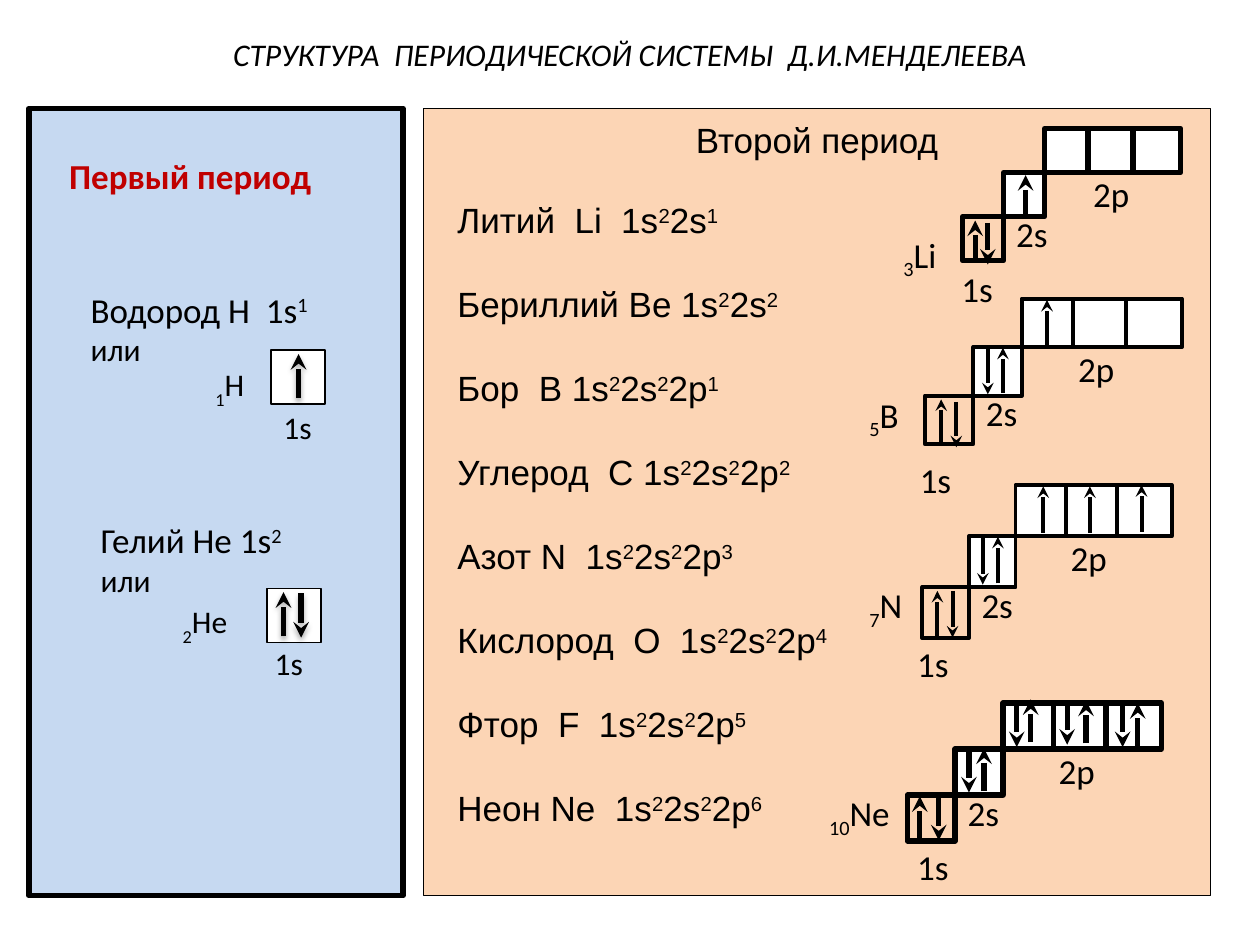
"""Slide on the first two periods of the periodic system with orbital diagrams."""
from dataclasses import dataclass

from lxml import etree
from pptx import Presentation
from pptx.dml.color import RGBColor
from pptx.enum.shapes import MSO_CONNECTOR, MSO_SHAPE
from pptx.enum.text import MSO_ANCHOR, PP_ALIGN
from pptx.oxml.ns import qn
from pptx.util import Inches, Pt

RECTANGLE, STRAIGHT = MSO_SHAPE.RECTANGLE, MSO_CONNECTOR.STRAIGHT
TOP, MIDDLE = MSO_ANCHOR.TOP, MSO_ANCHOR.MIDDLE
LEFT, CENTER = PP_ALIGN.LEFT, PP_ALIGN.CENTER


@dataclass(frozen=True)
class Theme:
    """Colours, fonts and type sizes."""
    ink: str = "000000"
    accent: str = "C00000"
    blue: str = "C6D9F1"
    peach: str = "FCD5B5"
    cell: str = "FFFFFF"
    body_font: str = "Calibri"
    list_font: str = "Arial"
    large: int = 20
    small: int = 18


THEME = Theme()

TITLE = "СТРУКТУРА  ПЕРИОДИЧЕСКОЙ СИСТЕМЫ  Д.И.МЕНДЕЛЕЕВА"
FIRST_PERIOD = "Первый период"
SECOND_PERIOD = "Второй период"
OR = "или"

# Every second part between bars is raised or lowered.
SECOND_PERIOD_ELEMENTS = [
    "Литий  Li  1s|2|2s|1",
    "Бериллий Ве 1s|2|2s|2",
    "Бор  В 1s|2|2s|2|2р|1",
    "Углерод  С 1s|2|2s|2|2р|2",
    "Азот N  1s|2|2s|2|2р|3",
    "Кислород  О  1s|2|2s|2|2р|4",
    "Фтор  F  1s|2|2s|2|2р|5",
    "Неон Nе  1s|2|2s|2|2р|6",
]

FIRST_PERIOD_ELEMENTS = [
    dict(formula="Водород Н  1s|1", formula_at=(0.62, 2.22), symbol="|1|Н",
         symbol_at=(1.69, 2.9), cell_at=(2.15, 2.78), orbital_at=(2.23, 3.24),
         up=[(2.37, 2.81)], down=[]),
    dict(formula="Гелий Не 1s|2", formula_at=(0.7, 4.05), symbol="|2|Не",
         symbol_at=(1.43, 4.78), cell_at=(2.12, 4.67), orbital_at=(2.16, 5.11),
         up=[(2.25, 4.7)], down=[(2.39, 4.71)]),
]

STAIRCASES = [
    dict(symbol="|3|Li", symbol_at=(7.15, 1.85), orbital_at=(7.61, 2.12),
         start=(7.64, 1.72), step=(0.325, 0.35), row=1.08, weight=3, arrow=0.33,
         up=[(7.74, 1.75), (8.14, 1.39)], down=[(7.84, 1.77)]),
    dict(symbol="|5|В", symbol_at=(6.88, 3.12), orbital_at=(7.28, 3.64),
         start=(7.34, 3.14), step=(0.385, 0.385), row=1.27, weight=2.25, arrow=0.36,
         up=[(7.47, 3.17), (7.96, 2.76), (8.31, 2.38)],
         down=[(7.59, 3.19), (7.84, 2.77)]),
    dict(symbol="|7|N", symbol_at=(6.88, 4.63), orbital_at=(7.26, 5.1),
         start=(7.32, 4.66), step=(0.37, 0.405), row=1.24, weight=2.25, arrow=0.37,
         up=[(7.44, 4.69), (7.92, 4.26), (8.28, 3.86), (8.65, 3.86), (9.06, 3.85)],
         down=[(7.56, 4.69), (7.8, 4.27)]),
    dict(symbol="|10|Nе", symbol_at=(6.56, 6.28), orbital_at=(7.26, 6.71),
         start=(7.2, 6.31), step=(0.38, 0.365), row=1.26, weight=3, arrow=0.34,
         up=[(7.3, 6.32), (7.81, 5.94), (8.18, 5.55), (8.62, 5.56), (9.03, 5.58)],
         down=[(7.45, 6.33), (7.69, 5.95), (8.07, 5.59), (8.47, 5.57), (8.91, 5.59)]),
]
DIVIDERS = (0.32, 0.65)


def write(paragraph, marked, size, shift=30, color=THEME.ink, font=THEME.body_font,
          bold=False, italic=False):
    for index, part in enumerate(marked.split("|")):
        if not part:
            continue
        run = paragraph.add_run()
        run.text = part
        run.font.size, run.font.name = Pt(size), font
        run.font.bold, run.font.italic = bold, italic
        run.font.color.rgb = RGBColor.from_string(color)
        if index % 2:
            run.font._element.set("baseline", str(shift * 1000))


def set_insets(frame, horizontal, vertical):
    frame.margin_left = frame.margin_right = Inches(horizontal)
    frame.margin_top = frame.margin_bottom = Inches(vertical)


def add_text(shapes, at, extent, marked, size, insets=(0.1, 0.05), anchor=MIDDLE,
             wrap=True, align=LEFT, **style):
    box = shapes.add_textbox(*map(Inches, at + extent))
    frame = box.text_frame
    frame.word_wrap, frame.vertical_anchor = wrap, anchor
    set_insets(frame, *insets)
    paragraph = frame.paragraphs[0]
    paragraph.alignment = align
    write(paragraph, marked, size, **style)
    return paragraph


def add_label(shapes, at, marked, size, shift=-25):
    add_text(shapes, at, (0.63, 0.4), marked, size, insets=(0.02, 0),
             anchor=TOP, shift=shift)


def add_box(shapes, at, extent, fill, weight):
    box = shapes.add_shape(RECTANGLE, *map(Inches, at + extent))
    box.shadow.inherit = False
    if fill:
        box.fill.solid()
        box.fill.fore_color.rgb = RGBColor.from_string(fill)
    else:
        box.fill.background()
    box.line.color.rgb = RGBColor.from_string(THEME.ink)
    box.line.width = Pt(weight)
    return box


def add_line(shapes, begin, end, weight, arrow=False, shadow=False):
    line = shapes.add_connector(STRAIGHT, *map(Inches, begin + end))
    line.line.color.rgb = RGBColor.from_string(THEME.ink)
    line.line.width = Pt(weight)
    if arrow:
        etree.SubElement(line.line._get_or_add_ln(), qn("a:tailEnd"), type="stealth")
    effects = etree.SubElement(line._element.spPr, qn("a:effectLst"))
    if shadow:
        outer = etree.SubElement(effects, qn("a:outerShdw"), blurRad=str(Pt(3.1)),
                                 dist=str(Pt(1.8)), dir="5400000", rotWithShape="0")
        color = etree.SubElement(outer, qn("a:srgbClr"), val=THEME.ink)
        etree.SubElement(color, qn("a:alpha"), val="35000")


def add_electrons(shapes, element, length, weight, shadow=False):
    for x, top in element["up"]:
        add_line(shapes, (x, top + length), (x, top), weight, True, shadow)
    for x, top in element["down"]:
        add_line(shapes, (x, top), (x, top + length), weight, True, shadow)


def add_first_period_element(slide, element):
    paragraph = add_text(slide.shapes, element["formula_at"], (2.19, 0.77),
                         element["formula"], THEME.large)
    paragraph.add_line_break()
    write(paragraph, OR, THEME.small)
    shapes = slide.shapes.add_group_shape().shapes
    add_box(shapes, element["cell_at"], (0.43, 0.43), THEME.cell, 1)
    add_label(shapes, element["orbital_at"], "1s", THEME.small)
    add_label(shapes, element["symbol_at"], element["symbol"], THEME.small, -30)
    add_electrons(shapes, element, 0.35, 3, shadow=True)


def add_staircase(slide, element):
    shapes = slide.shapes.add_group_shape().shapes
    (x, y), (width, height) = element["start"], element["step"]
    row, weight = element["row"], element["weight"]
    row_left, row_top = x + 2 * width, y - 2 * height
    add_box(shapes, (x, y), (width, height), None, weight)
    add_box(shapes, (x + width, y - height), (width, height), THEME.cell, weight)
    add_box(shapes, (row_left, row_top), (row, height), THEME.cell, weight)
    for share in DIVIDERS:
        divider = row_left + share * row
        add_line(shapes, (divider, row_top), (divider, row_top + height), weight)
    add_label(shapes, element["orbital_at"], "1s", THEME.large)
    add_label(shapes, (x + width + 0.08, y - 0.03), "2s", THEME.large)
    add_label(shapes, (row_left + DIVIDERS[0] * row + 0.02, y - height), "2р", THEME.large)
    add_label(shapes, element["symbol_at"], element["symbol"], THEME.large)
    add_electrons(shapes, element, element["arrow"], weight)


def add_second_period_list(panel):
    frame = panel.text_frame
    frame.word_wrap, frame.vertical_anchor = True, TOP
    set_insets(frame, 0.08, 0.08)
    heading = frame.paragraphs[0]
    heading.alignment, heading.space_after = CENTER, Pt(10)
    write(heading, SECOND_PERIOD, THEME.large, font=THEME.list_font)
    for formula in SECOND_PERIOD_ELEMENTS:
        paragraph = frame.add_paragraph()
        paragraph.alignment = LEFT
        paragraph.space_before = paragraph.space_after = Pt(12)
        paragraph._p.get_or_add_pPr().set("marL", str(Inches(0.19)))
        write(paragraph, formula, THEME.large, font=THEME.list_font)


def main():
    deck = Presentation()
    deck.slide_width, deck.slide_height = Inches(10), Inches(7.5)
    slide = deck.slides.add_slide(deck.slide_layouts[6])
    add_box(slide.shapes, (0.23, 0.86), (2.97, 6.25), THEME.blue, 3)
    add_second_period_list(
        add_box(slide.shapes, (3.36, 0.86), (6.25, 6.25), THEME.peach, 0.75))
    add_text(slide.shapes, (1.06, 0.23), (7.88, 0.4), TITLE, THEME.small,
             wrap=False, align=CENTER, italic=True)
    add_text(slide.shapes, (0.45, 1.17), (2.5, 0.44), FIRST_PERIOD, THEME.large,
             color=THEME.accent, bold=True)
    for element in FIRST_PERIOD_ELEMENTS:
        add_first_period_element(slide, element)
    for element in STAIRCASES:
        add_staircase(slide, element)
    deck.save("out.pptx")


if __name__ == "__main__":
    main()
